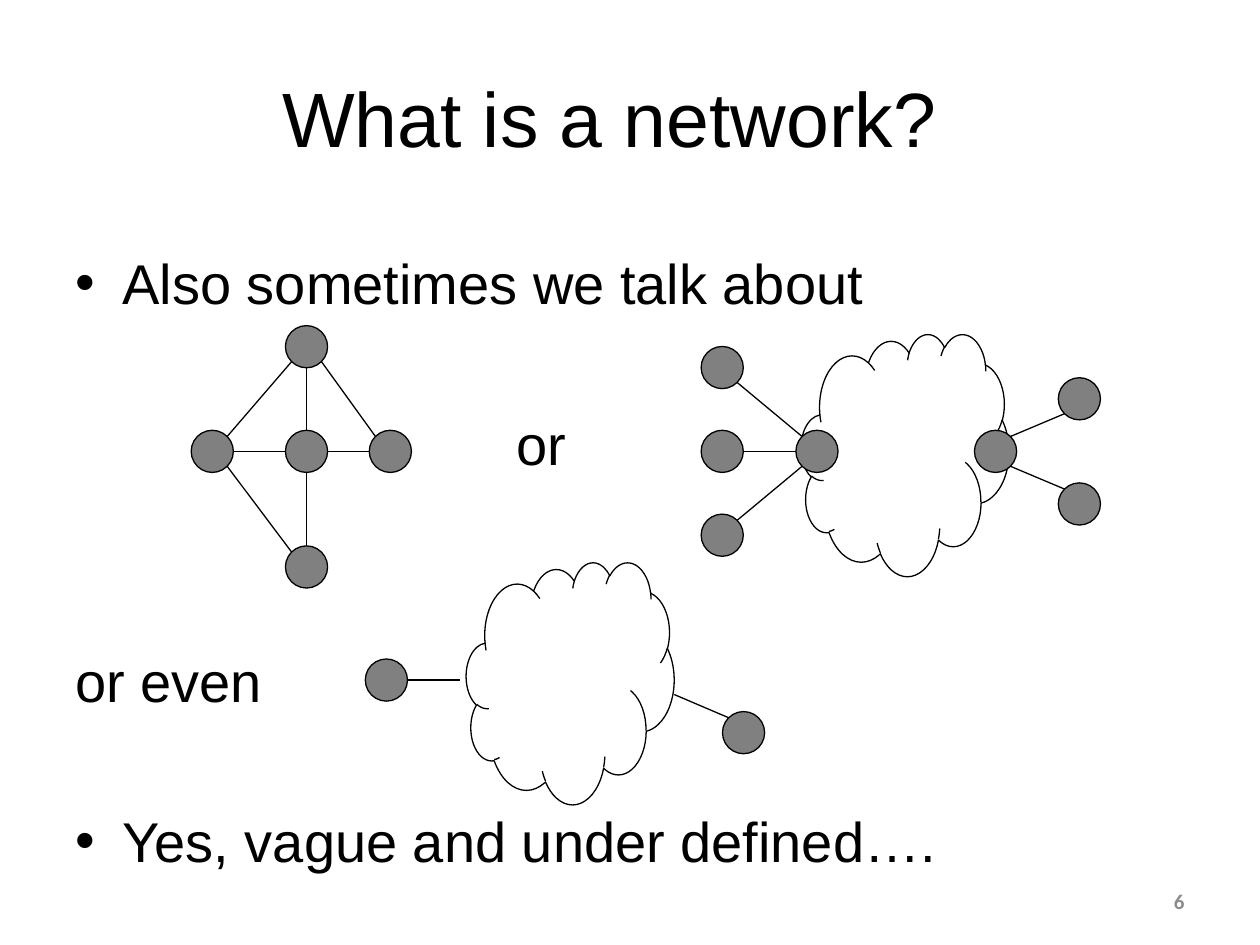
import dataclasses
import math

import pptx
import pptx.dml.color
import pptx.enum.shapes
import pptx.enum.text
import pptx.oxml.ns
import pptx.util
from lxml import etree

Cm = pptx.util.Cm
Pt = pptx.util.Pt
RGBColor = pptx.dml.color.RGBColor
MSO_SHAPE = pptx.enum.shapes.MSO_SHAPE
PP_ALIGN = pptx.enum.text.PP_ALIGN
MSO_ANCHOR = pptx.enum.text.MSO_ANCHOR
qn = pptx.oxml.ns.qn

BLACK = RGBColor(0x00, 0x00, 0x00)
WHITE = RGBColor(0xFF, 0xFF, 0xFF)
NODE_GRAY = RGBColor(0x80, 0x80, 0x80)
NUMBER_GRAY = RGBColor(0x8C, 0x8C, 0x8C)
HAIRLINE = Pt(0.75)
HANGING = 0.95


@dataclasses.dataclass(frozen=True)
class Node:
    x: float
    y: float
    diameter: float = 0.85


@dataclasses.dataclass(frozen=True)
class Cloud:
    left: float
    top: float
    width: float = 4.19
    height: float = 4.88


@dataclasses.dataclass(frozen=True)
class BodyLine:
    text: str
    space_before: float = 0
    indent: float = 0
    bullet: bool = False


def sign(v: float) -> int:
    return (v > 0) - (v < 0)


def rim_point(node: Node, other: Node) -> tuple[float, float]:
    dx, dy = sign(other.x - node.x), sign(other.y - node.y)
    reach = node.diameter / 2 / math.hypot(dx, dy)
    return node.x + dx * reach, node.y + dy * reach


def add_outlined(s, kind, left: float, top: float, width: float, height: float, fill: RGBColor) -> None:
    sp = s.shapes.add_shape(kind, Cm(left), Cm(top), Cm(width), Cm(height))
    sp.shadow.inherit = False
    sp.fill.solid()
    sp.fill.fore_color.rgb = fill
    sp.line.color.rgb = BLACK
    sp.line.width = HAIRLINE


def add_node(s, node: Node) -> None:
    d = node.diameter
    add_outlined(s, MSO_SHAPE.OVAL, node.x - d / 2, node.y - d / 2, d, d, NODE_GRAY)


def add_cloud(s, cloud: Cloud) -> None:
    add_outlined(s, MSO_SHAPE.CLOUD, cloud.left, cloud.top, cloud.width, cloud.height, WHITE)


def add_link(s, start: Node, end: Node) -> None:
    points = rim_point(start, end) + rim_point(end, start)
    cn = s.shapes.add_connector(pptx.enum.shapes.MSO_CONNECTOR.STRAIGHT, *map(Cm, points))
    cn.line.color.rgb = BLACK
    cn.line.width = HAIRLINE
    etree.SubElement(cn._element.spPr, qn("a:effectLst"))


def format_runs(p, font: str, size: float, color: RGBColor, bold: bool = False) -> None:
    for r in p.runs:
        r.font.name = font
        r.font.size = Pt(size)
        r.font.color.rgb = color
        r.font.bold = bold


def add_textbox(s, left: float, top: float, width: float, height: float):
    tf = s.shapes.add_textbox(Cm(left), Cm(top), Cm(width), Cm(height)).text_frame
    tf.word_wrap = True
    return tf


def add_body(s, lines: list[BodyLine]) -> None:
    tf = add_textbox(s, 1.27, 4.88, 22.86, 13.3)
    for i, line in enumerate(lines):
        p = tf.paragraphs[0] if i == 0 else tf.add_paragraph()
        p.text = line.text
        p.space_before = Pt(line.space_before)
        format_runs(p, "Arial", 32, BLACK)
        pPr = p._p.get_or_add_pPr()
        pPr.set("marL", str(Cm(HANGING if line.bullet else line.indent)))
        pPr.set("indent", str(Cm(-HANGING if line.bullet else 0)))
        if line.bullet:
            etree.SubElement(pPr, qn("a:buFont"), typeface="Arial")
            etree.SubElement(pPr, qn("a:buChar"), char="•")
        else:
            etree.SubElement(pPr, qn("a:buNone"))


def add_title(s, text: str) -> None:
    sp = s.shapes.title
    sp.left, sp.top, sp.width, sp.height = Cm(1.27), Cm(0.76), Cm(22.86), Cm(3.18)
    tf = sp.text_frame
    tf.text = text
    tf.vertical_anchor = MSO_ANCHOR.MIDDLE
    tf.margin_right = Cm(1.07)
    p = tf.paragraphs[0]
    p.alignment = PP_ALIGN.CENTER
    format_runs(p, "Arial", 44, BLACK)


def add_page_number(s, text: str) -> None:
    tf = add_textbox(s, 18.2, 17.67, 5.93, 1.01)
    tf.text = text
    tf.vertical_anchor = MSO_ANCHOR.MIDDLE
    p = tf.paragraphs[0]
    p.alignment = PP_ALIGN.RIGHT
    format_runs(p, "Calibri", 12, NUMBER_GRAY, bold=True)


def main() -> None:
    prs = pptx.Presentation()
    prs.slide_width, prs.slide_height = Cm(25.4), Cm(19.05)
    s = prs.slides.add_slide(prs.slide_layouts[5])

    add_title(s, "What is a network?")
    add_body(s, [
        BodyLine("Also sometimes we talk about", bullet=True),
        BodyLine("or", space_before=54, indent=8.89),
        BodyLine("or even", space_before=96.5),
        BodyLine("Yes, vague and under defined….", space_before=53, bullet=True),
    ])
    add_page_number(s, "6")

    middle = 9.1
    hub, top, bottom = (Node(6.18, y) for y in (middle, 6.99, 11.43))
    west, east = Node(4.28, middle), Node(7.87, middle)
    entry, leave = Node(16.47, middle), Node(20.07, middle)
    sources = [Node(14.56, middle + dy) for dy in (-1.69, 0, 1.69)]
    targets = [Node(21.76, middle + dy) for dy in (-1.06, 1.06)]
    sender, receiver = Node(7.79, 13.71), Node(14.99, 14.77)
    cloud_in, cloud_out = Node(9.27, 13.71, 0), Node(13.59, 14, 0)

    for cloud in (Cloud(16.15, 6.73), Cloud(9.4, 11.33)):
        add_cloud(s, cloud)
    for node in (hub, top, bottom, west, east, entry, leave, *sources, *targets, sender, receiver):
        add_node(s, node)
    links = [(hub, node) for node in (top, bottom, west, east)]
    links += [(west, top), (west, bottom), (top, east)]
    links += [(source, entry) for source in sources]
    links += [(leave, target) for target in targets]
    links += [(sender, cloud_in), (cloud_out, receiver)]
    for start, end in links:
        add_link(s, start, end)

    prs.save("out.pptx")


if __name__ == "__main__":
    main()
